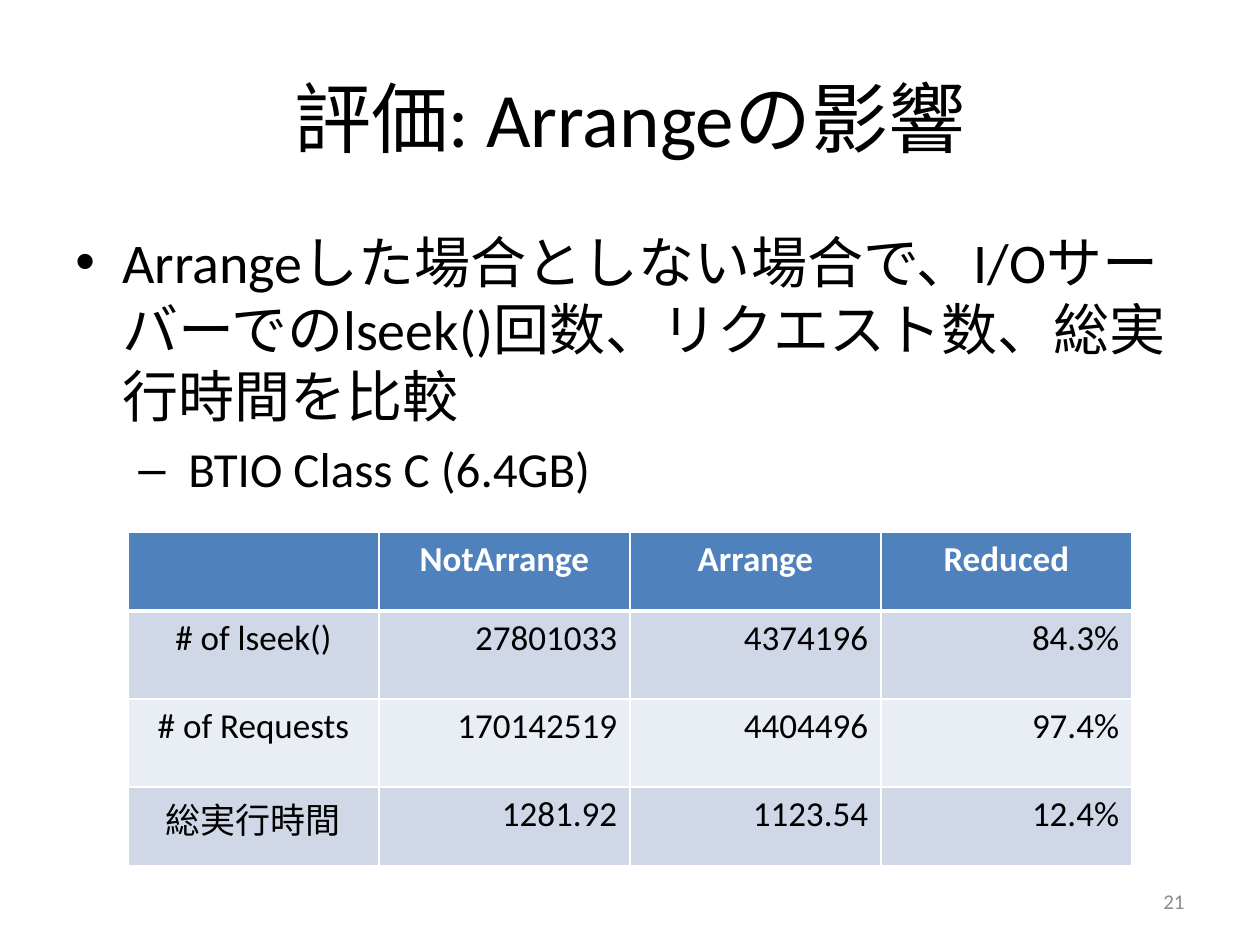
from lxml import etree
from pptx import Presentation
from pptx.dml.color import RGBColor
from pptx.enum.text import MSO_ANCHOR, PP_ALIGN
from pptx.oxml.ns import qn
from pptx.util import Pt

EMU_PER_PX = 914400 / 126
LEFT, CENTER, RIGHT = PP_ALIGN.LEFT, PP_ALIGN.CENTER, PP_ALIGN.RIGHT
TOP, MIDDLE = MSO_ANCHOR.TOP, MSO_ANCHOR.MIDDLE
FONT = "Calibri"
BLACK, WHITE, GRAY = "000000", "FFFFFF", "8C8C8C"
HEADER_FILL, BAND_FILLS = "4F81BD", ("D0D8E8", "E9EDF4")

BULLETS = [
    {"text": "Arrangeした場合としない場合で、I/Oサーバーでのlseek()回数、リクエスト数、総実行時間を比較",
     "size": 32, "level": 0, "bullet": "•", "margin": 47, "indent": -47},
    {"text": " BTIO Class C (6.4GB)",
     "size": 28, "level": 1, "bullet": "–", "margin": 102, "indent": -39},
]
RESULTS = [
    ["", "NotArrange", "Arrange", "Reduced"],
    ["# of lseek()", "27801033", "4374196", "84.3%"],
    ["# of Requests", "170142519", "4404496", "97.4%"],
    ["総実行時間", "1281.92", "1123.54", "12.4%"],
]
COLUMN_WIDTH = 251
ROW_HEIGHTS = [79, 88, 88, 79]


def px(length):
    """Turn pixels into EMU."""
    return round(length * EMU_PER_PX)


def color(value):
    """Turn a hex string into a colour."""
    return RGBColor.from_string(value)


def write(paragraph, text, size, hex_color=BLACK, align=LEFT, bold=False):
    """Put one formatted run into a paragraph."""
    paragraph.alignment = align
    run = paragraph.add_run()
    run.text = text
    for name, value in {"name": FONT, "size": Pt(size), "bold": bold}.items():
        setattr(run.font, name, value)
    run.font.color.rgb = color(hex_color)


def add_text_frame(slide, left, top, width, height, anchor):
    """Add a wrapping text box and return its text frame."""
    box = slide.shapes.add_textbox(px(left), px(top), px(width), px(height))
    frame = box.text_frame
    for name, value in {"word_wrap": True, "vertical_anchor": anchor}.items():
        setattr(frame, name, value)
    return frame


def set_bullet(paragraph, character, margin, indent):
    """Give a paragraph a bullet character and a hanging indent."""
    properties = paragraph._p.get_or_add_pPr()
    properties.set("marL", str(px(margin)))
    properties.set("indent", str(px(indent)))
    etree.SubElement(properties, qn("a:buFont")).set("typeface", "Arial")
    etree.SubElement(properties, qn("a:buChar")).set("char", character)


def add_bullets(slide, items):
    """Add the bulleted body text."""
    frame = add_text_frame(slide, 63, 221, 1134, 624, TOP)
    for index, item in enumerate(items):
        paragraph = frame.add_paragraph() if index else frame.paragraphs[0]
        paragraph.level = item["level"]
        paragraph.space_before = Pt(item["size"] * 0.2)
        write(paragraph, item["text"], item["size"])
        set_bullet(paragraph, item["bullet"], item["margin"], item["indent"])


def set_borders(cell, widths):
    """Draw white cell borders with the given widths in points."""
    properties = cell._tc.get_or_add_tcPr()
    for index, (side, width) in enumerate(widths.items()):
        line = etree.Element(qn(f"a:ln{side}"), w=str(Pt(width)))
        fill = etree.SubElement(line, qn("a:solidFill"))
        etree.SubElement(fill, qn("a:srgbClr")).set("val", WHITE)
        properties.insert(index, line)


def fill_cell(cell, text, row, column):
    """Write and format one table cell according to its place."""
    header = row == 0
    cell.fill.solid()
    cell.fill.fore_color.rgb = color(HEADER_FILL if header else BAND_FILLS[(row - 1) % 2])
    set_borders(cell, {"L": 1, "R": 1, "T": 3 if row == 1 else 1, "B": 3 if header else 1})
    if text:
        align = CENTER if header or column == 0 else RIGHT
        write(cell.text_frame.paragraphs[0], text, 20, WHITE if header else BLACK, align, header)


def add_results_table(slide, rows):
    """Add the comparison table."""
    columns = len(rows[0])
    table = slide.shapes.add_table(
        len(rows), columns, px(128), px(532), px(COLUMN_WIDTH * columns), px(sum(ROW_HEIGHTS))
    ).table
    for column in table.columns:
        column.width = px(COLUMN_WIDTH)
    for row_index, texts in enumerate(rows):
        table.rows[row_index].height = px(ROW_HEIGHTS[row_index])
        for column_index, text in enumerate(texts):
            fill_cell(table.cell(row_index, column_index), text, row_index, column_index)


def main():
    """Build the slide and save it."""
    presentation = Presentation()
    presentation.slide_width, presentation.slide_height = px(1260), px(945)
    slide = presentation.slides.add_slide(presentation.slide_layouts[6])
    title = add_text_frame(slide, 63, 38, 1134, 157, MIDDLE)
    write(title.paragraphs[0], "評価: Arrangeの影響", 44, align=CENTER)
    add_bullets(slide, BULLETS)
    number = add_text_frame(slide, 903, 876, 294, 50, MIDDLE)
    write(number.paragraphs[0], "21", 12, GRAY, RIGHT)
    add_results_table(slide, RESULTS)
    presentation.save("out.pptx")


if __name__ == "__main__":
    main()
